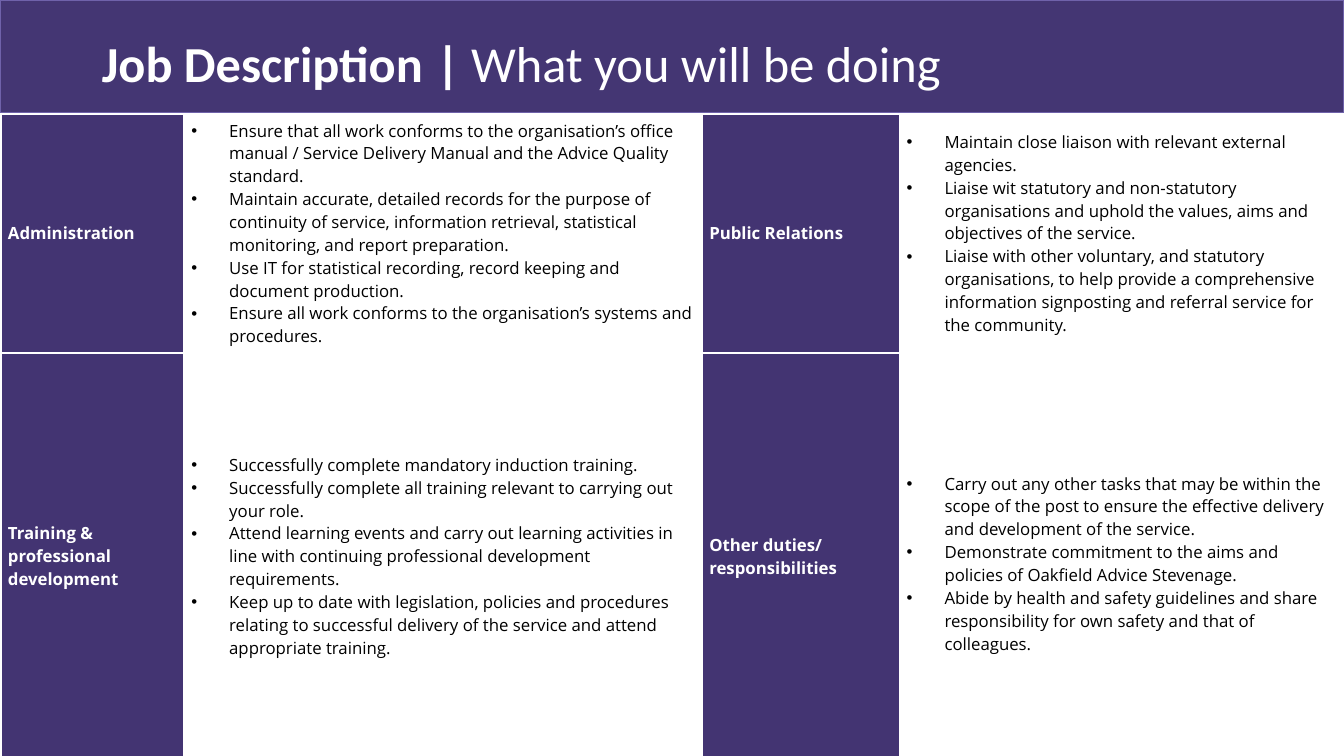
from dataclasses import dataclass

from lxml import etree
from pptx import Presentation
from pptx.dml.color import RGBColor
from pptx.enum.shapes import MSO_SHAPE
from pptx.enum.text import MSO_ANCHOR, MSO_AUTO_SIZE, PP_ALIGN
from pptx.oxml.ns import qn
from pptx.util import Pt

RECT = MSO_SHAPE.RECTANGLE
MIDDLE = MSO_ANCHOR.MIDDLE
TOP = MSO_ANCHOR.TOP
LEFT = PP_ALIGN.LEFT
NO_FIT = MSO_AUTO_SIZE.NONE

WHITE, BLACK = "FFFFFF", "000000"
BANNER, EDGE, LABEL = "443673", "6F62AA", "433472"
WIDTHS = (131, 370, 141, 317.5)
HEIGHTS = (167.8, 290.9)
INDENT = Pt(27)


@dataclass
class Duty:
    label: str
    tasks: tuple[str, ...]
    drop: float = 0


@dataclass
class Part:
    text: str
    size: float
    bold: bool


TITLE = (
    Part("Job Description", 36, True),
    Part(" ", 40, False),
    Part("| ", 36, True),
    Part("What you will be doing", 36, False),
)

DUTIES = (
    (
        Duty("Administration", (
            "Ensure that all work conforms to the organisation’s office manual / "
            "Service Delivery Manual and the Advice Quality standard.",
            "Maintain accurate, detailed records for the purpose of continuity of "
            "service, information retrieval, statistical monitoring, and report "
            "preparation.",
            "Use IT for statistical recording, record keeping and document production.",
            "Ensure all work conforms to the organisation’s systems and procedures.",
        )),
        Duty("Public Relations", (
            "Maintain close liaison with relevant external agencies.",
            "Liaise wit statutory and non-statutory organisations and uphold the "
            "values, aims and objectives of the service.",
            "Liaise with other voluntary, and statutory organisations, to help provide "
            "a comprehensive information signposting and referral service for the "
            "community.",
        )),
    ),
    (
        Duty("Training & professional development", (
            "Successfully complete mandatory induction training.",
            "Successfully complete all training relevant to carrying out your role.",
            "Attend learning events and carry out learning activities in line with "
            "continuing professional development requirements.",
            "Keep up to date with legislation, policies and procedures relating to "
            "successful delivery of the service and attend appropriate training.",
        )),
        Duty("Other duties/ responsibilities", (
            "Carry out any other tasks that may be within the scope of the post to "
            "ensure the effective delivery and development of the service.",
            "Demonstrate commitment to the aims and policies of Oakfield Advice "
            "Stevenage.",
            "Abide by health and safety guidelines and share responsibility for own "
            "safety and that of colleagues.",
        ), drop=81.7),
    ),
)


def color(code: str) -> RGBColor:
    return RGBColor.from_string(code)


def style(font, name: str, size: float, code: str, bold: bool) -> None:
    font.name, font.size, font.bold = name, Pt(size), bold
    font.color.rgb = color(code)


def add_border(cell) -> None:
    props = cell._tc.get_or_add_tcPr()
    for side in ("lnL", "lnR", "lnT", "lnB"):
        line = etree.SubElement(props, qn(f"a:{side}"), w=str(Pt(1.5)))
        fill = etree.SubElement(line, qn("a:solidFill"))
        etree.SubElement(fill, qn("a:srgbClr"), val=WHITE)


def add_bullet(para) -> None:
    props = para._p.get_or_add_pPr()
    props.set("marL", str(INDENT))
    props.set("indent", str(-INDENT))
    etree.SubElement(props, qn("a:buFont"), typeface="Arial")
    etree.SubElement(props, qn("a:buChar"), char="•")


def fill_cell(cell, lines: tuple[str, ...], back: str, ink: str,
              head: bool, drop: float = 0) -> None:
    add_border(cell)
    cell.fill.solid()
    cell.fill.fore_color.rgb = color(back)
    cell.vertical_anchor = TOP if drop else MIDDLE
    cell.margin_left = cell.margin_right = Pt(5)
    cell.margin_top, cell.margin_bottom = Pt(3.6 + drop), Pt(3.6)
    frame = cell.text_frame
    frame.text = "\n".join(lines)
    for para in frame.paragraphs:
        if not head:
            add_bullet(para)
        style(para.font, "Open Sans", 12, ink, head)


def add_title(slide) -> None:
    title = slide.shapes.title
    title.left, title.top = Pt(65.5), Pt(-6.5)
    title.width, title.height = Pt(828), Pt(104.4)
    frame = title.text_frame
    frame.auto_size, frame.word_wrap = NO_FIT, True
    frame.vertical_anchor = MIDDLE
    para = frame.paragraphs[0]
    para.alignment, para.line_spacing = LEFT, 0.9
    for part in TITLE:
        run = para.add_run()
        run.text = part.text
        style(run.font, "Calibri", part.size, WHITE, part.bold)


def add_banner(slide) -> None:
    banner = slide.shapes.add_shape(RECT, 0, 0, Pt(960), Pt(80.6))
    banner.shadow.inherit = False
    banner.fill.solid()
    banner.fill.fore_color.rgb = color(BANNER)
    banner.line.color.rgb = color(EDGE)
    banner.line.width = Pt(1)
    slide.shapes.title._element.addprevious(banner._element)


def add_duties(slide) -> None:
    table = slide.shapes.add_table(
        len(HEIGHTS), len(WIDTHS), Pt(0.7), Pt(81.4),
        Pt(sum(WIDTHS)), Pt(sum(HEIGHTS))).table
    table.first_row = table.horz_banding = False
    for column, width in zip(table.columns, WIDTHS):
        column.width = Pt(width)
    for row, height in zip(table.rows, HEIGHTS):
        row.height = Pt(height)
    for r, pair in enumerate(DUTIES):
        for c, duty in enumerate(pair):
            fill_cell(table.cell(r, 2 * c), (duty.label,), LABEL, WHITE, True)
            fill_cell(table.cell(r, 2 * c + 1), duty.tasks, WHITE, BLACK,
                      False, duty.drop)


def main() -> None:
    deck = Presentation()
    deck.slide_width, deck.slide_height = Pt(960), Pt(540)
    slide = deck.slides.add_slide(deck.slide_layouts[5])
    add_title(slide)
    add_banner(slide)
    add_duties(slide)
    deck.save("out.pptx")


if __name__ == "__main__":
    main()
